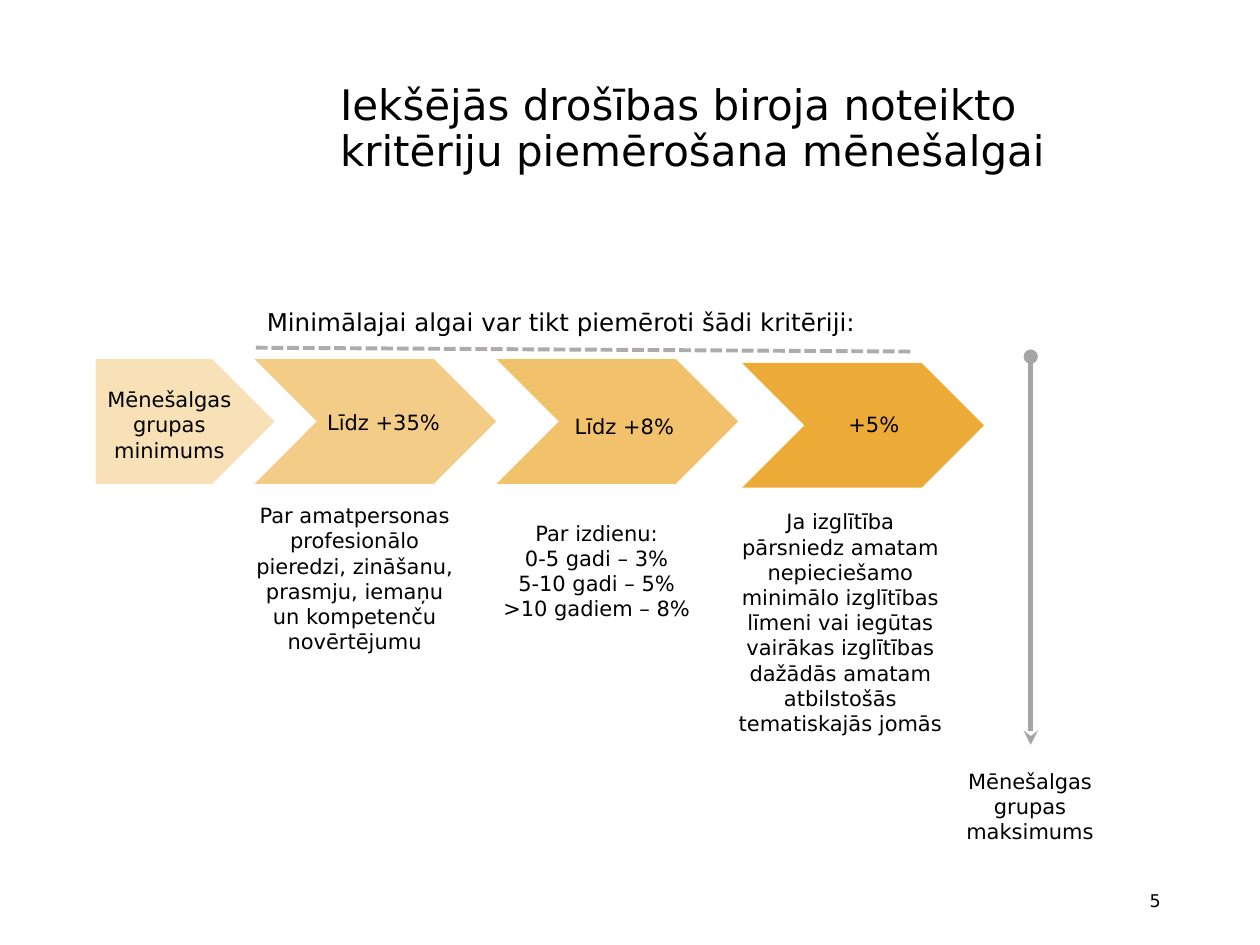
from lxml import etree
from pptx import Presentation
from pptx.dml.color import RGBColor
from pptx.enum import dml, shapes, text
from pptx.oxml.ns import qn
from pptx.util import Pt

FONT = "DejaVu Sans"
BLACK = RGBColor(0x00, 0x00, 0x00)
AMBER = RGBColor(0xE9, 0x9C, 0x11)
DASH_GREY = RGBColor(0xAF, 0xAB, 0xAB)
ARROW_GREY = RGBColor(0xA5, 0xA5, 0xA5)
LEFT, CENTER, RIGHT = text.PP_ALIGN.LEFT, text.PP_ALIGN.CENTER, text.PP_ALIGN.RIGHT
TOP, MIDDLE = text.MSO_ANCHOR.TOP, text.MSO_ANCHOR.MIDDLE

STEP_W, STEP_H = 138.2, 71.3

# Step: left, top, opacity %, label and its offset, description lines and their box offset and size
STEPS = [
    (145.4, 205.2, 50, "Līdz +35%", (25.2, 25.2),
     ["Par amatpersonas profesionālo pieredzi, zināšanu, prasmju, iemaņu un kompetenču novērtējumu"],
     (-7.9, 78.5, 130.3, 94.3)),
    (283.7, 205.2, 62, "Līdz +8%", (24.5, 27.7),
     ["Par izdienu:", "0-5 gadi – 3%", "5-10 gadi – 5%", ">10 gadiem – 8%"],
     (-7.9, 88.6, 130.3, 65.5)),
    (424.1, 207.4, 84, "+5%", (26.6, 24.5),
     ["Ja izglītība pārsniedz amatam nepieciešamo minimālo izglītības līmeni vai iegūtas "
      "vairākas izglītības dažādās amatam atbilstošās tematiskajās jomās"],
     (-10.8, 79.9, 133.9, 138.2)),
]


def add_text(s, x, y, w, h, lines, size=12, align=CENTER, anchor=TOP, spacing=None):
    tf = s.shapes.add_textbox(Pt(x), Pt(y), Pt(w), Pt(h)).text_frame
    tf.word_wrap = True
    tf.vertical_anchor = anchor
    for i, line in enumerate(lines):
        p = tf.paragraphs[0] if i == 0 else tf.add_paragraph()
        p.text = line
        p.alignment = align
        p.line_spacing = spacing
        p.font.name, p.font.size = FONT, Pt(size)
        p.font.color.rgb = BLACK


def add_block(s, kind, x, y, w, h, opacity):
    sp = s.shapes.add_shape(kind, Pt(x), Pt(y), Pt(w), Pt(h))
    sp.shadow.inherit = False
    sp.line.fill.background()
    sp.fill.solid()
    sp.fill.fore_color.rgb = AMBER
    color = sp.fill._xPr.find(".//" + qn("a:srgbClr"))
    etree.SubElement(color, qn("a:alpha"), val=str(opacity * 1000))


def add_line(s, x1, y1, x2, y2, color, width):
    line = s.shapes.add_connector(shapes.MSO_CONNECTOR.STRAIGHT, Pt(x1), Pt(y1), Pt(x2), Pt(y2))
    line.line.color.rgb = color
    line.line.width = Pt(width)
    etree.SubElement(line._element.spPr, qn("a:effectLst"))
    return line


def add_minimum(s, x, y):
    add_block(s, shapes.MSO_SHAPE.PENTAGON, x, y, 102.2, STEP_H, 30)
    add_text(s, x - 2.9, y + 12.2, 90, 51.1, ["Mēnešalgas grupas minimums"])


def add_step(s, x, y, opacity, label, label_at, lines, box):
    add_block(s, shapes.MSO_SHAPE.CHEVRON, x, y, STEP_W, STEP_H, opacity)
    add_text(s, x + label_at[0], y + label_at[1], 97.2, 21.6, [label])
    dx, dy, w, h = box
    add_text(s, x + dx, y + dy, w, h, lines)


def add_criteria_heading(s, x, y):
    add_text(s, x, y, 362.9, 24.5, ["Minimālajai algai var tikt piemēroti šādi kritēriji:"],
             size=14, align=LEFT)
    dashes = add_line(s, x + 0.8, y + 26.6, x + 375.9, y + 28.8, DASH_GREY, 2.25)
    dashes.line.dash_style = dml.MSO_LINE.SQUARE_DOT


def add_maximum(s, x, y, h):
    arrow = add_line(s, x, y, x, y + h, ARROW_GREY, 2.75)
    ln = arrow.line._get_or_add_ln()
    etree.SubElement(ln, qn("a:headEnd"), type="oval")
    etree.SubElement(ln, qn("a:tailEnd"), type="stealth")
    add_text(s, x - 49, y + h + 10, 97.2, 51.1, ["Mēnešalgas grupas maksimums"])


def main():
    prs = Presentation()
    prs.slide_width, prs.slide_height = Pt(720), Pt(540)
    s = prs.slides.add_slide(prs.slide_layouts[6])

    # Title and page number
    add_text(s, 187.2, 31, 483.1, 86.4,
             ["Iekšējās drošības biroja noteikto kritēriju piemērošana mēnešalgai"],
             size=24, align=LEFT, anchor=MIDDLE, spacing=0.9)
    add_text(s, 508.3, 500.4, 162, 28.8, ["5"], size=10, align=RIGHT, anchor=MIDDLE)

    # Salary path from minimum to maximum
    for step in STEPS:
        add_step(s, *step)
    add_criteria_heading(s, 145.4, 172.1)
    add_maximum(s, 589, 203.8, 221.8)
    add_minimum(s, 54.7, 205.2)

    prs.save("out.pptx")


if __name__ == "__main__":
    main()
